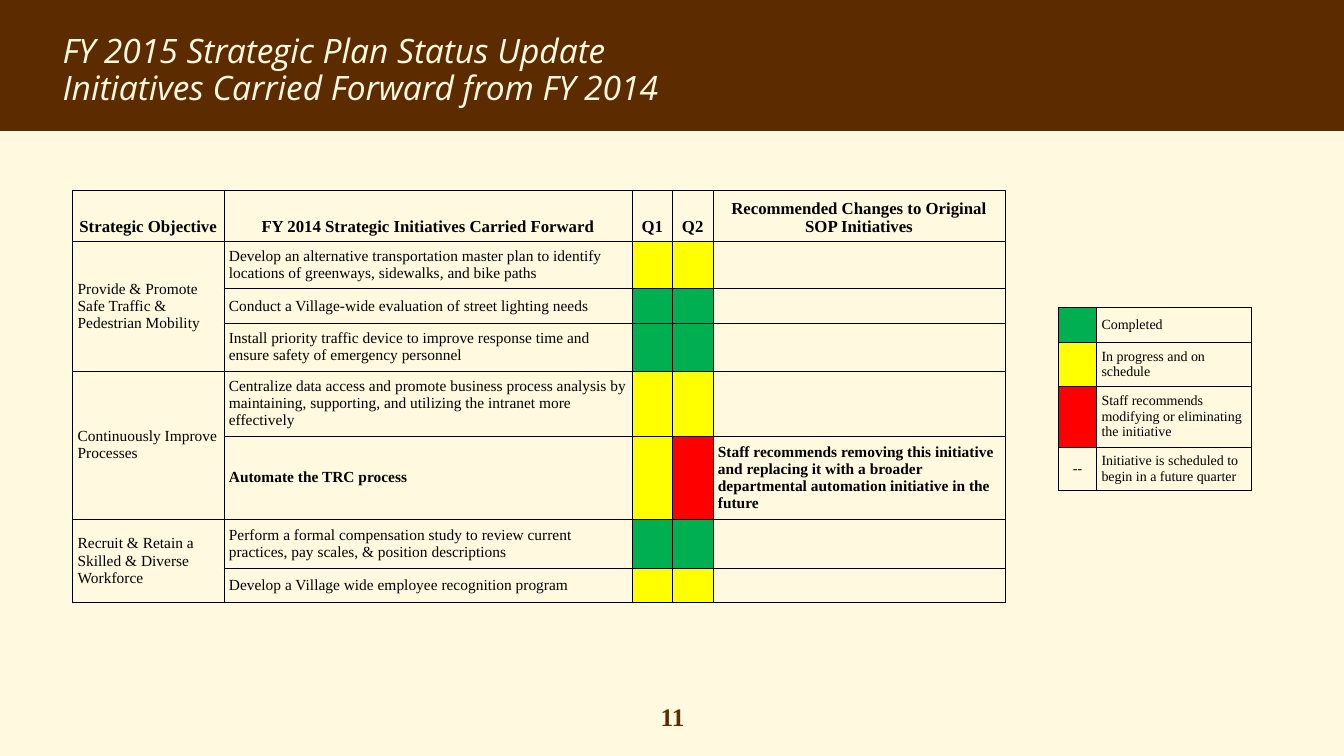
from dataclasses import dataclass

from lxml import etree
from pptx import Presentation
from pptx.dml.color import RGBColor
from pptx.enum.shapes import MSO_SHAPE
from pptx.enum.text import MSO_ANCHOR, PP_ALIGN
from pptx.oxml.ns import qn
from pptx.util import Emu, Inches, Pt

RECT = MSO_SHAPE.RECTANGLE
LEFT, CENTER = PP_ALIGN.LEFT, PP_ALIGN.CENTER
MIDDLE, BOTTOM = MSO_ANCHOR.MIDDLE, MSO_ANCHOR.BOTTOM

GRID = Inches(0.05)  # one grid unit, both across and down
SERIF, SANS = "Times New Roman", "Open Sans"
BROWN, CREAM, BLACK = "5D2B00", "FFF9DF", "000000"
GREEN, YELLOW, RED = "00B050", "FFFF00", "FF0000"


@dataclass
class Cell:
    text: str = ""
    fill: str = ""
    bold: bool = False
    align: PP_ALIGN = LEFT
    anchor: MSO_ANCHOR = MIDDLE
    rows: int = 1


@dataclass
class Initiative:
    text: str
    q1: str
    q2: str
    change: str = ""


@dataclass
class Objective:
    text: str
    initiatives: list[Initiative]


@dataclass
class Grid:
    left: float
    top: float
    cols: list[float]
    rows: list[float]
    size: int


HEADINGS = ["Strategic Objective", "FY 2014 Strategic Initiatives Carried Forward",
            "Q1", "Q2", "Recommended Changes to Original SOP Initiatives"]
OBJECTIVES = [
    Objective("Provide & Promote Safe Traffic & Pedestrian Mobility", [
        Initiative("Develop an alternative transportation master plan to identify "
                   "locations of greenways, sidewalks, and bike paths", YELLOW, YELLOW),
        Initiative("Conduct a Village-wide evaluation of street lighting needs",
                   GREEN, GREEN),
        Initiative("Install priority traffic device to improve response time and "
                   "ensure safety of emergency personnel", GREEN, GREEN)]),
    Objective("Continuously Improve Processes", [
        Initiative("Centralize data access and promote business process analysis by "
                   "maintaining, supporting, and utilizing the intranet more effectively",
                   YELLOW, YELLOW),
        Initiative("Automate the TRC process", YELLOW, RED,
                   "Staff recommends removing this initiative and replacing it with a "
                   "broader departmental automation initiative in the future")]),
    Objective("Recruit & Retain a Skilled & Diverse Workforce", [
        Initiative("Perform a formal compensation study to review current practices, "
                   "pay scales, & position descriptions", GREEN, GREEN),
        Initiative("Develop a Village wide employee recognition program",
                   YELLOW, YELLOW)]),
]
LEGEND = [
    [Cell(fill=GREEN), Cell("Completed")],
    [Cell(fill=YELLOW), Cell("In progress and on schedule")],
    [Cell(fill=RED), Cell("Staff recommends modifying or eliminating the initiative")],
    [Cell("--", align=CENTER),
     Cell("Initiative is scheduled to begin in a future quarter")],
]
STATUS_GRID = Grid(14.4, 37.8, [30, 81, 8, 8, 58],
                   [10.1, 9.4, 6.9, 9.4, 12.9, 16.6, 9.6, 6.8], 11)
LEGEND_GRID = Grid(210, 61, [7.5, 30.8], [7, 8.6, 12.1, 8.6], 10)


def u(units: float) -> Emu:
    return Emu(round(units * GRID))


def rgb(color: str) -> RGBColor:
    return RGBColor.from_string(color)


def format_runs(p, size: int, font: str, color: str, bold=False, italic=False) -> None:
    for r in p.runs:
        r.font.size, r.font.name = Pt(size), font
        r.font.bold, r.font.italic = bold, italic
        r.font.color.rgb = rgb(color)


def add_borders(cell) -> None:
    tcPr = cell._tc.get_or_add_tcPr()
    for i, side in enumerate(("lnL", "lnR", "lnT", "lnB")):
        ln = etree.Element(qn(f"a:{side}"), w=str(Pt(0.5)))
        fill = etree.SubElement(ln, qn("a:solidFill"))
        etree.SubElement(fill, qn("a:srgbClr"), val=BLACK)
        tcPr.insert(i, ln)


def draw_cell(cell, item: Cell, size: int) -> None:
    cell.margin_left = cell.margin_right = u(1)
    cell.margin_top = cell.margin_bottom = u(1)
    cell.vertical_anchor = item.anchor
    if item.fill:
        cell.fill.solid()
        cell.fill.fore_color.rgb = rgb(item.fill)
    else:
        cell.fill.background()
    add_borders(cell)
    p = cell.text_frame.paragraphs[0]
    if item.text:
        p.text = item.text
        p.alignment = item.align
        format_runs(p, size, SERIF, BLACK, item.bold)
    else:  # keeps empty cells from stretching their row
        p._p.get_or_add_endParaRPr().set("sz", str(size * 100))


def draw_table(s, grid: Grid, rows: list[list[Cell]], head_size: int) -> None:
    frame = s.shapes.add_table(len(grid.rows), len(grid.cols), u(grid.left),
                               u(grid.top), u(sum(grid.cols)), u(sum(grid.rows)))
    table = frame.table
    table.first_row = table.horz_banding = False
    for column, width in zip(table.columns, grid.cols):
        column.width = u(width)
    for i, (height, items) in enumerate(zip(grid.rows, rows)):
        table.rows[i].height = u(height)
        for j, item in enumerate(items):
            draw_cell(table.cell(i, j), item, grid.size if i else head_size)
            if item.rows > 1:
                table.cell(i, j).merge(table.cell(i + item.rows - 1, j))


def status_rows() -> list[list[Cell]]:
    rows = [[Cell(h, bold=True, align=CENTER, anchor=BOTTOM) for h in HEADINGS]]
    for objective in OBJECTIVES:
        for i, item in enumerate(objective.initiatives):
            first = Cell() if i else Cell(objective.text,
                                          rows=len(objective.initiatives))
            rows.append([first, Cell(item.text, bold=bool(item.change)),
                         Cell(fill=item.q1), Cell(fill=item.q2),
                         Cell(item.change, bold=True)])
    return rows


def main() -> None:
    prs = Presentation()
    prs.slide_width, prs.slide_height = Inches(13.33), Inches(7.5)
    s = prs.slides.add_slide(prs.slide_layouts[5])
    s.background.fill.solid()
    s.background.fill.fore_color.rgb = rgb(CREAM)

    # Header band, behind the title
    band = s.shapes.add_shape(RECT, 0, 0, prs.slide_width, u(26))
    band.shadow.inherit = False
    band.fill.solid()
    band.fill.fore_color.rgb = rgb(BROWN)
    band.line.fill.background()
    s.shapes._spTree.insert(2, band._element)

    # Title
    title = s.shapes.title
    title.left, title.top, title.width, title.height = u(10.4), u(5), u(245.8), u(18.2)
    tf = title.text_frame
    tf.text = ("FY 2015 Strategic Plan Status Update\n"
               "Initiatives Carried Forward from FY 2014")
    tf.word_wrap, tf.vertical_anchor = True, MIDDLE
    for p in tf.paragraphs:
        p.alignment, p.line_spacing = LEFT, 0.9
        format_runs(p, 24, SANS, CREAM, italic=True)

    # Status table and its legend
    draw_table(s, STATUS_GRID, status_rows(), head_size=12)
    draw_table(s, LEGEND_GRID, LEGEND, head_size=10)

    # Page number
    tf = s.shapes.add_textbox(u(123.4), u(138.2), u(20), u(8)).text_frame
    tf.word_wrap = True
    tf.text = "11"
    tf.paragraphs[0].alignment = CENTER
    format_runs(tf.paragraphs[0], 18, SERIF, BROWN, bold=True)

    prs.save("out.pptx")


if __name__ == "__main__":
    main()
